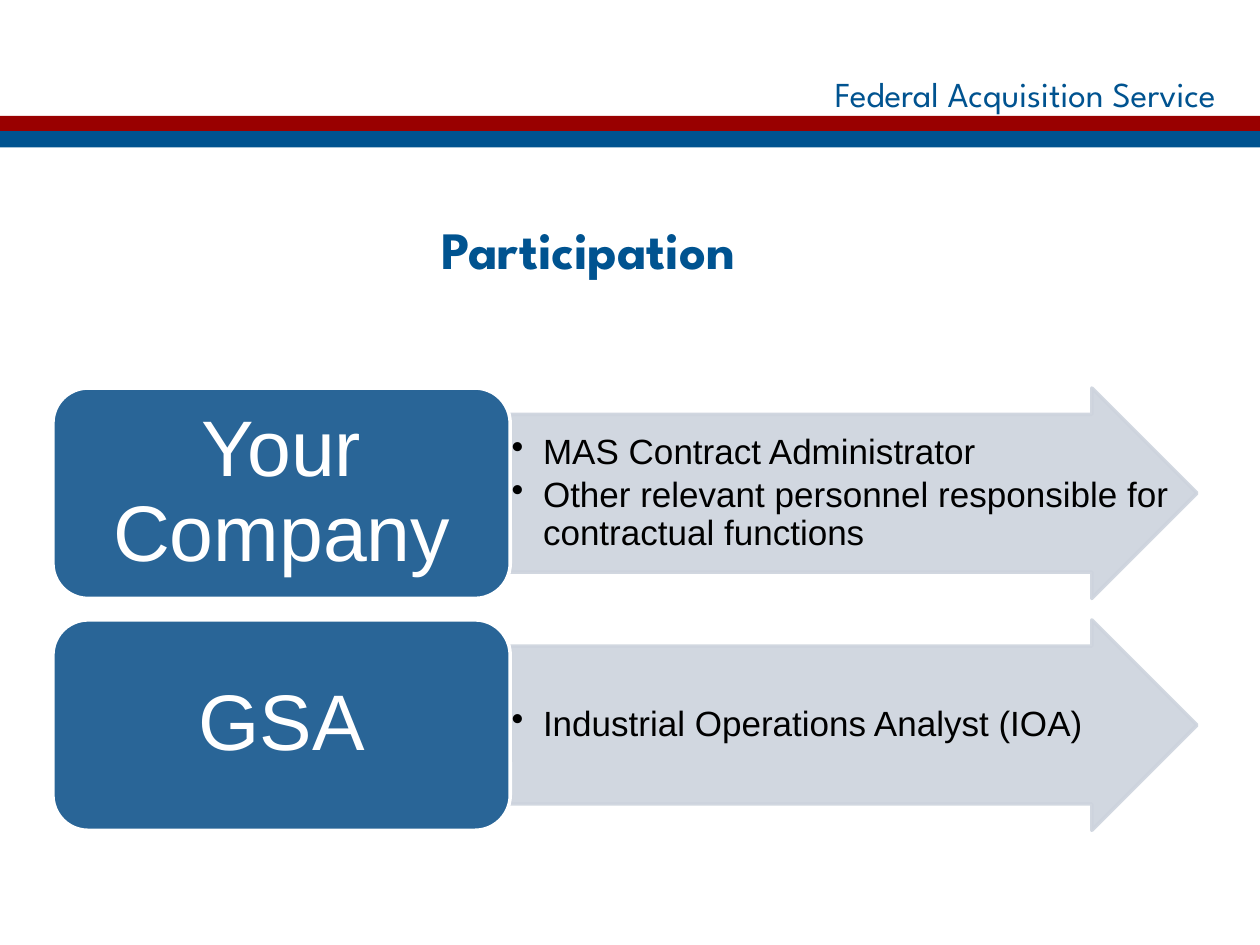
from lxml import etree
from pptx import Presentation
from pptx.dml.color import RGBColor
from pptx.enum import shapes, text
from pptx.oxml.ns import qn
from pptx.util import Inches, Pt

COLORS = {"blue": "005390", "red": "990000", "box": "296597",
          "arrow": "CDD3DD", "white": "FFFFFF", "black": "000000"}
SERVICE = "Federal Acquisition Service"
TITLE = "Participation"
PARTIES = [
    ("Your Company", ["MAS Contract Administrator",
                      "Other relevant personnel responsible for contractual functions"]),
    ("GSA", ["Industrial Operations Analyst (IOA)"]),
]
STRIPES = [("red", 0.92), ("blue", 1.04)]
LEFT, TOP, ROW_H, ROW_STEP = 0.42, 3.08, 1.67, 1.84
BOX_W, ARROW_W = 3.63, 5.45


def rgb(name):
    return RGBColor.from_string(COLORS[name])


def add_shape(s, kind, at, fill, line=None):
    sp = s.shapes.add_shape(kind, *map(Inches, at))
    sp.shadow.inherit = False
    sp.fill.solid()
    sp.fill.fore_color.rgb = rgb(fill)
    if line:
        sp.line.color.rgb = rgb(line)
        sp.line.width = Pt(2)
    else:
        sp.line.fill.background()
    return sp


def write(sp, lines, size, color, font="Arial", bold=False, align="LEFT", anchor="MIDDLE",
          insets=(0.1, 0.05), wrap=True, spacing=None, after=0, bullet=False):
    tf = sp.text_frame
    tf.word_wrap = wrap
    tf.vertical_anchor = text.MSO_ANCHOR[anchor]
    tf.margin_left = tf.margin_right = Inches(insets[0])
    tf.margin_top = tf.margin_bottom = Inches(insets[1])
    for i, line in enumerate(lines):
        p = tf.paragraphs[0] if i == 0 else tf.add_paragraph()
        p.alignment = text.PP_ALIGN[align]
        p.line_spacing = spacing
        p.space_after = Pt(after)
        if bullet:
            pPr = p._p.get_or_add_pPr()
            pPr.set("marL", str(Inches(0.25)))
            pPr.set("indent", str(-Inches(0.25)))
            etree.SubElement(pPr, qn("a:buChar"), char="•")
        r = p.add_run()
        r.text = line
        r.font.name, r.font.size, r.font.bold = font, Pt(size), bold
        r.font.color.rgb = rgb(color)


def add_text(s, at, lines, size, color, **fmt):
    write(s.shapes.add_textbox(*map(Inches, at)), lines, size, color, **fmt)


def add_arrow(s, at):
    sp = add_shape(s, shapes.MSO_SHAPE.RIGHT_ARROW, at, "arrow", "arrow")
    sp.adjustments[0], sp.adjustments[1] = 0.75, 0.5
    for color in sp._element.spPr.iter(qn("a:srgbClr")):
        etree.SubElement(color, qn("a:alpha"), val="90000")


def main():
    prs = Presentation()
    prs.slide_width, prs.slide_height = Inches(10), Inches(7.5)
    s = prs.slides.add_slide(prs.slide_layouts[6])

    add_text(s, (5.5, 0.55, 4.25, 0.38), [SERVICE], 20, "blue",
             font="League Spartan", align="RIGHT", wrap=False)
    for color, top in STRIPES:
        add_shape(s, shapes.MSO_SHAPE.RECTANGLE, (0, top, 10, 0.13), color)
    add_text(s, (LEFT, 1.67, 8.5, 0.61), [TITLE], 30, "blue",
             font="League Spartan", bold=True, align="CENTER", anchor="TOP")

    for i, (party, roles) in enumerate(PARTIES):
        top = TOP + i * ROW_STEP
        arrow_at = (LEFT + BOX_W, top, ARROW_W, ROW_H)
        add_arrow(s, arrow_at)
        add_text(s, arrow_at, roles, 20, "black", insets=(0.01, 0.01),
                 spacing=0.9, after=3, bullet=True)
        box = add_shape(s, shapes.MSO_SHAPE.ROUNDED_RECTANGLE,
                        (LEFT, top, BOX_W, ROW_H), "box", "white")
        write(box, [party], 45, "white", align="CENTER", insets=(0.11, 0.01), spacing=0.9)

    prs.save("out.pptx")


if __name__ == "__main__":
    main()
